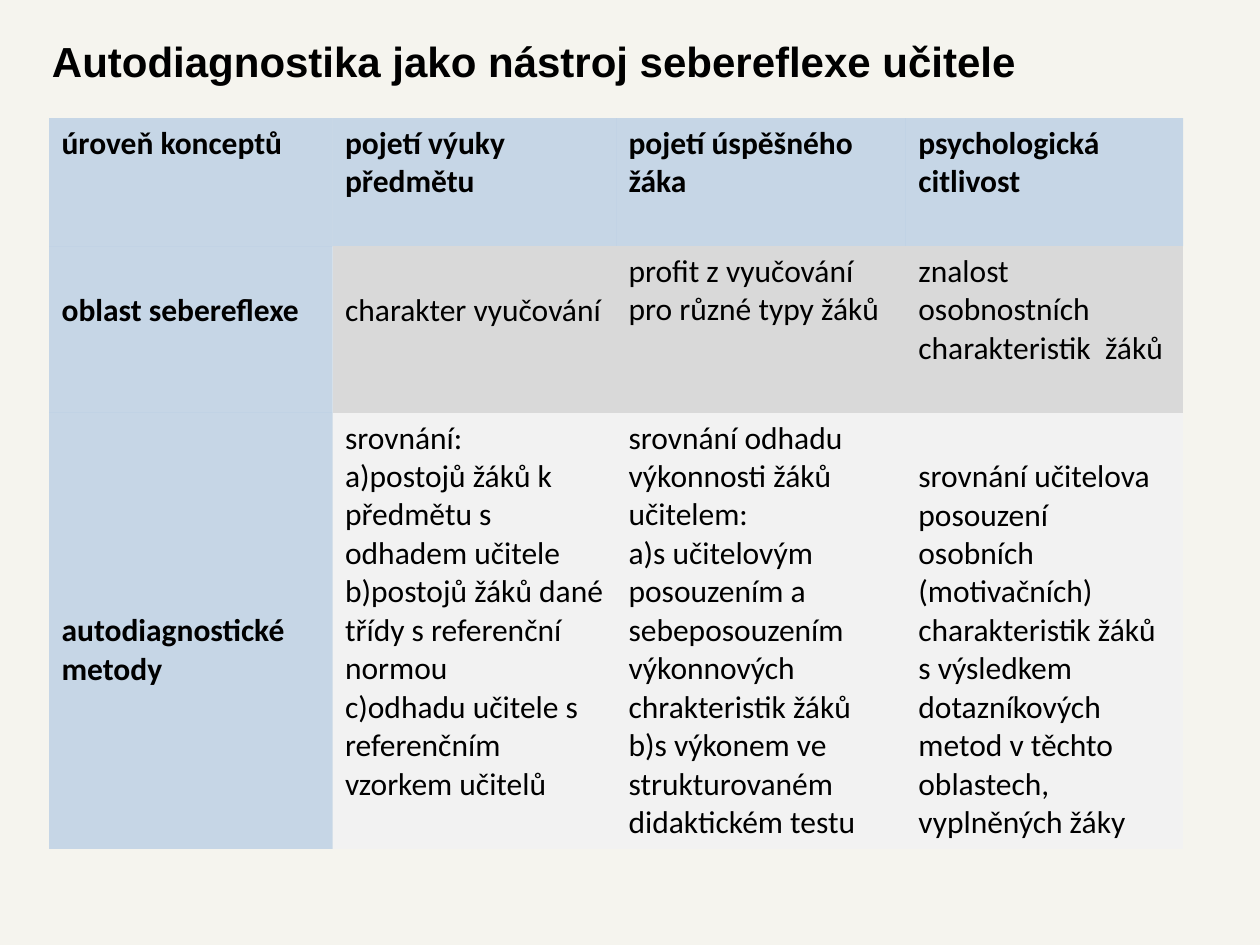
from dataclasses import dataclass

from lxml.etree import SubElement
from pptx import Presentation
from pptx.dml.color import RGBColor
from pptx.enum.text import MSO_ANCHOR, MSO_AUTO_SIZE, PP_ALIGN
from pptx.oxml.ns import qn
from pptx.slide import Slide
from pptx.table import Table, _Cell
from pptx.text.text import _Paragraph
from pptx.util import Pt


@dataclass(frozen=True)
class Fill:
    color: str
    opacity: int = 100


@dataclass(frozen=True)
class Theme:
    background: Fill = Fill("EEECE1", 54)
    heading: Fill = Fill("558ED5", 29)
    area: Fill = Fill("D9D9D9")
    method: Fill = Fill("F2F2F2")
    text: str = "000000"
    title_font: str = "Arial"
    table_font: str = "Calibri"
    title_size: float = 24
    table_size: float = 18
    line_height: float = 22
    cell_margin: float = 3.6


@dataclass(frozen=True)
class Item:
    text: str
    numbered: bool = False


@dataclass(frozen=True)
class Entry:
    items: tuple[Item, ...]
    lines_above: int = 0


@dataclass(frozen=True)
class Row:
    line_count: int
    fill: Fill
    entries: tuple[Entry, ...]


THEME = Theme()
NO_STYLE_NO_GRID = "{2D5ABB26-0587-4C30-8999-92F81FD0307C}"
COLUMN_WIDTHS = (162, 162, 165.6, 158.4)


def entry(text: str, lines_above: int = 0) -> Entry:
    return Entry((Item(text),), lines_above)


ROWS = (
    Row(3, THEME.heading, (
        entry("úroveň konceptů"),
        entry("pojetí výuky předmětu"),
        entry("pojetí úspěšného žáka"),
        entry("psychologická citlivost"),
    )),
    Row(4, THEME.area, (
        entry("oblast sebereflexe", 1),
        entry("charakter vyučování", 1),
        entry("profit z vyučování pro různé typy žáků"),
        entry("znalost osobnostních charakteristik  žáků"),
    )),
    Row(11, THEME.method, (
        entry("autodiagnostické metody", 5),
        Entry((
            Item("srovnání:"),
            Item("postojů žáků k předmětu s odhadem učitele", True),
            Item("postojů žáků dané třídy s referenční normou", True),
            Item("odhadu učitele s referenčním vzorkem učitelů", True),
        )),
        Entry((
            Item("srovnání odhadu výkonnosti žáků učitelem:"),
            Item("s učitelovým posouzením a sebeposouzením výkonnových", True),
            Item("chrakteristik žáků\nb)s výkonem ve strukturovaném didaktickém testu"),
        )),
        entry("srovnání učitelova posouzení osobních (motivačních) charakteristik žáků "
              "s výsledkem dotazníkových metod v těchto oblastech, vyplněných žáky", 1),
    )),
)


def apply_fill(target, element, fill: Fill) -> None:
    target.fill.solid()
    target.fill.fore_color.rgb = RGBColor.from_string(fill.color)
    if fill.opacity < 100:
        color = element.find(".//" + qn("a:srgbClr"))
        SubElement(color, qn("a:alpha")).set("val", str(fill.opacity * 1000))


def add_text(paragraph: _Paragraph, text: str, font: str, size: float, bold: bool) -> None:
    for index, line in enumerate(text.split("\n")):
        if index:
            paragraph.add_line_break()
        run = paragraph.add_run()
        run.text = line
        run.font.name = font
        run.font.size = Pt(size)
        run.font.bold = bold
        run.font.color.rgb = RGBColor.from_string(THEME.text)


def number_paragraph(paragraph: _Paragraph) -> None:
    properties = paragraph._p.get_or_add_pPr()
    properties.set("marL", "0")
    properties.set("indent", "0")
    SubElement(properties, qn("a:buAutoNum")).set("type", "alphaLcParenR")


def fill_cell(cell: _Cell, content: Entry, fill: Fill, bold: bool) -> None:
    cell.margin_top = Pt(THEME.cell_margin + content.lines_above * THEME.line_height)
    cell.margin_bottom = Pt(THEME.cell_margin)
    apply_fill(cell, cell._tc, fill)
    for index, item in enumerate(content.items):
        frame = cell.text_frame
        paragraph = frame.add_paragraph() if index else frame.paragraphs[0]
        if item.numbered:
            number_paragraph(paragraph)
        add_text(paragraph, item.text, THEME.table_font, THEME.table_size, bold)


def clear_style(table: Table) -> None:
    table.first_row = False
    table.horz_banding = False
    table._tbl.tblPr.find(qn("a:tableStyleId")).text = NO_STYLE_NO_GRID


def add_concept_table(slide: Slide) -> None:
    heights = [row.line_count * THEME.line_height + 2 * THEME.cell_margin for row in ROWS]
    frame = slide.shapes.add_table(
        len(ROWS), len(COLUMN_WIDTHS), Pt(28), Pt(67.5), Pt(sum(COLUMN_WIDTHS)), Pt(sum(heights)))
    table = frame.table
    clear_style(table)
    for column, width in zip(table.columns, COLUMN_WIDTHS):
        column.width = Pt(width)
    for row_index, row in enumerate(ROWS):
        table.rows[row_index].height = Pt(heights[row_index])
        for column_index, content in enumerate(row.entries):
            heading = row_index == 0 or column_index == 0
            fill = THEME.heading if heading else row.fill
            fill_cell(table.cell(row_index, column_index), content, fill, heading)


def set_title(slide: Slide, text: str) -> None:
    title = slide.shapes.title
    title.left, title.top, title.width, title.height = Pt(22.5), Pt(16.5), Pt(570), Pt(36.5)
    frame = title.text_frame
    frame.word_wrap = False
    frame.auto_size = MSO_AUTO_SIZE.SHAPE_TO_FIT_TEXT
    frame.vertical_anchor = MSO_ANCHOR.TOP
    paragraph = frame.paragraphs[0]
    paragraph.alignment = PP_ALIGN.LEFT
    add_text(paragraph, text, THEME.title_font, THEME.title_size, True)


def main() -> None:
    presentation = Presentation()
    presentation.slide_width, presentation.slide_height = Pt(720), Pt(540)
    slide = presentation.slides.add_slide(presentation.slide_layouts[5])
    apply_fill(slide.background, slide._element, THEME.background)
    add_concept_table(slide)
    set_title(slide, "Autodiagnostika jako nástroj sebereflexe učitele")
    presentation.save("out.pptx")


if __name__ == "__main__":
    main()
